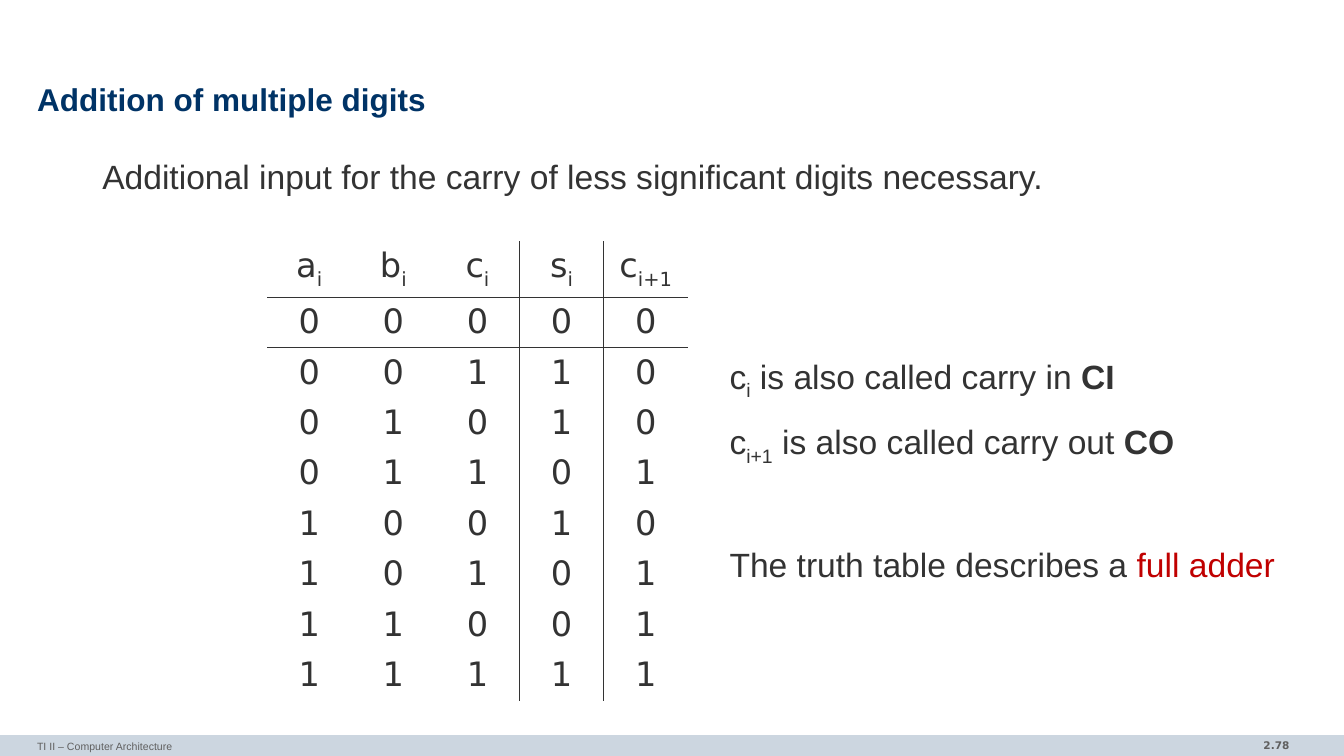
from lxml.etree import SubElement
from pptx import Presentation
from pptx.dml.color import RGBColor
from pptx.enum.shapes import MSO_SHAPE
from pptx.enum.text import MSO_ANCHOR, PP_ALIGN
from pptx.oxml.ns import qn
from pptx.util import Pt

COLORS = {"title": "003366", "body": "333333", "accent": "C00000",
          "bar": "CCD6E0", "footer": "5F5F5F"}
NO_GRID_STYLE = "{2D5ABB26-0587-4C30-8999-92F81FD0307C}"
HEADERS = [("a", "i"), ("b", "i"), ("c", "i"), ("s", "i"), ("c", "i+1")]
INPUT_COUNT = 3


def add_run(paragraph, text, size=24, color="body", font="Arial", bold=False, subscript=False):
    """Append one formatted run to the paragraph."""
    run = paragraph.add_run()
    run.text = text
    run.font.size = Pt(size)
    run.font.name = font
    run.font.bold = bold
    run.font.color.rgb = RGBColor.from_string(COLORS[color])
    if subscript:
        run.font._element.set("baseline", "-25000")


def add_text_frame(slide, box, insets=(7.2, 3.6), anchor=MSO_ANCHOR.TOP):
    """Add a wrapping text box and return its text frame."""
    frame = slide.shapes.add_textbox(*map(Pt, box)).text_frame
    frame.word_wrap = True
    frame.vertical_anchor = anchor
    frame.margin_left = frame.margin_right = Pt(insets[0])
    frame.margin_top = frame.margin_bottom = Pt(insets[1])
    return frame


def add_title(slide, box):
    """Add the slide heading."""
    paragraph = add_text_frame(slide, box, (0, 0), MSO_ANCHOR.MIDDLE).paragraphs[0]
    paragraph.line_spacing = 0.85
    add_run(paragraph, "Addition of multiple digits", 22.5, "title", bold=True)


def add_introduction(slide, box):
    """Add the sentence above the truth table."""
    paragraph = add_text_frame(slide, box).paragraphs[0]
    add_run(paragraph, "Additional input for the carry of less significant digits necessary.")


def add_border(cell, side):
    """Draw a thin line on one side of a table cell."""
    line = SubElement(cell._tc.get_or_add_tcPr(), qn(f"a:{side}"), w=str(Pt(1)))
    fill = SubElement(line, qn("a:solidFill"))
    SubElement(fill, qn("a:srgbClr"), val=COLORS["body"])


def add_truth_table(slide, box):
    """Add the full adder truth table with rules below the header and after the inputs."""
    left, top, width, height = box
    header_height = 40
    row_count = 2 ** INPUT_COUNT
    shape = slide.shapes.add_table(row_count + 1, len(HEADERS), *map(Pt, box))
    table = shape.table
    table.first_row = table.horz_banding = False
    table._tbl.tblPr.find(qn("a:tableStyleId")).text = NO_GRID_STYLE
    for column in table.columns:
        column.width = Pt(width / len(HEADERS))
    for row_index, row in enumerate(table.rows):
        row.height = Pt(header_height if row_index == 0 else (height - header_height) / row_count)
        number = row_index - 1
        inputs = [number >> shift & 1 for shift in reversed(range(INPUT_COUNT))]
        total = sum(inputs)
        digits = inputs + [total % 2, total // 2]
        for column_index, cell in enumerate(row.cells):
            paragraph = cell.text_frame.paragraphs[0]
            paragraph.alignment = PP_ALIGN.CENTER
            if row_index == 0:
                letter, index = HEADERS[column_index]
                add_run(paragraph, letter, font="DejaVu Sans")
                add_run(paragraph, index, font="DejaVu Sans", subscript=True)
            else:
                add_run(paragraph, str(digits[column_index]), font="DejaVu Sans")
            if column_index == INPUT_COUNT:
                add_border(cell, "lnL")
            if column_index == INPUT_COUNT - 1:
                add_border(cell, "lnR")
            if row_index == 1:
                add_border(cell, "lnT")
            if row_index == 0:
                add_border(cell, "lnB")
            cell.fill.background()


def add_explanation(slide, box):
    """Add the notes on carry in, carry out and the full adder."""
    frame = add_text_frame(slide, box)
    carries = [("i", " is also called carry in ", "CI"),
               ("i+1", " is also called carry out ", "CO")]
    for number, (index, text, name) in enumerate(carries):
        paragraph = frame.add_paragraph() if number else frame.paragraphs[0]
        if number:
            paragraph.space_before = Pt(13.8)
        add_run(paragraph, "c")
        add_run(paragraph, index, subscript=True)
        add_run(paragraph, text)
        add_run(paragraph, name, bold=True)
    conclusion = frame.add_paragraph()
    conclusion.space_before = Pt(55.2)
    add_run(conclusion, "The truth table describes a ")
    add_run(conclusion, "full adder", color="accent")


def add_footer(slide, box):
    """Add the footer bar with the course name and page number."""
    left, top, width, height = box
    bar = slide.shapes.add_shape(MSO_SHAPE.RECTANGLE, *map(Pt, box))
    bar.shadow.inherit = False
    bar.fill.solid()
    bar.fill.fore_color.rgb = RGBColor.from_string(COLORS["bar"])
    bar.line.fill.background()
    course = add_text_frame(slide, (left + 26.5, top, 628, height), (0, 3.6))
    add_run(course.paragraphs[0], "TI II – Computer Architecture", 7.5, "footer")
    page = add_text_frame(slide, (left + width - 160.8, top, 129, height), anchor=MSO_ANCHOR.MIDDLE)
    page.paragraphs[0].alignment = PP_ALIGN.RIGHT
    add_run(page.paragraphs[0], "2.78", 7.5, "footer", "DejaVu Sans", True)


def main():
    """Build and save the slide."""
    presentation = Presentation()
    presentation.slide_width, presentation.slide_height = Pt(960), Pt(540)
    slide = presentation.slides.add_slide(presentation.slide_layouts[6])
    add_footer(slide, (0, 525, 960, 15))
    add_title(slide, (26.5, 56, 907, 34))
    add_introduction(slide, (66, 108, 708.5, 36))
    add_truth_table(slide, (190.8, 172.4, 300.5, 328))
    add_explanation(slide, (514, 250.6, 420, 167))
    presentation.save("out.pptx")


if __name__ == "__main__":
    main()
